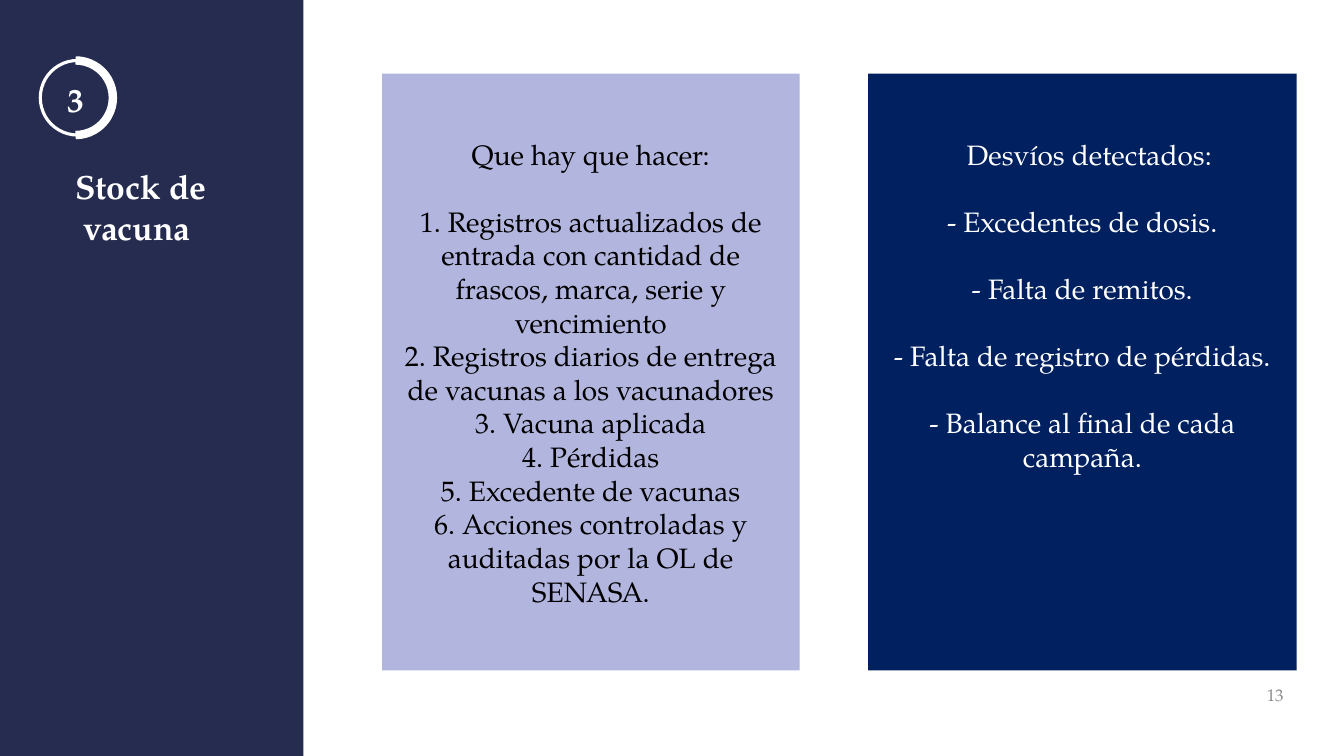
import lxml.etree
import pptx
import pptx.dml.color
import pptx.enum.shapes
import pptx.enum.text
import pptx.oxml.ns
import pptx.util

RGBColor = pptx.dml.color.RGBColor
SHAPE = pptx.enum.shapes.MSO_SHAPE
ALIGN = pptx.enum.text.PP_ALIGN
ANCHOR = pptx.enum.text.MSO_ANCHOR
qn = pptx.oxml.ns.qn

NAVY = RGBColor(0x25, 0x2C, 0x4F)
LAVENDER = RGBColor(0xB2, 0xB5, 0xDE)
BLUE = RGBColor(0x00, 0x20, 0x60)
WHITE = RGBColor(0xFF, 0xFF, 0xFF)
BLACK = RGBColor(0, 0, 0)
GREY = RGBColor(0x88, 0x88, 0x88)

FONT = "TeX Gyre Pagella"
WIDTH, HEIGHT = 13.33, 7.5
SIDEBAR_WIDTH = 3.01
PANEL_TOP, PANEL_HEIGHT = 0.73, 5.92
PAGE_NUMBER = 13

TASKS = [
    "Que hay que hacer:",
    "1. Registros actualizados de entrada con cantidad de frascos, marca, serie y vencimiento",
    "2. Registros diarios de entrega de vacunas a los vacunadores",
    "3. Vacuna aplicada",
    "4. Pérdidas",
    "5. Excedente de vacunas",
    "6. Acciones controladas y auditadas por la OL de SENASA.",
]
DEVIATIONS = [
    "Desvíos detectados:",
    "- Excedentes de dosis.",
    "- Falta de remitos.",
    "- Falta de registro de pérdidas.",
    "- Balance al final de cada campaña.",
]


def inches(*lengths):
    return [pptx.util.Inches(length) for length in lengths]


def apply(target, formats):
    for name, value in formats.items():
        setattr(target, name, value)


def style_font(font, size, color, bold=False):
    apply(font, {"name": FONT, "size": pptx.util.Pt(size), "bold": bold})
    font.color.rgb = color


def set_frame(frame, anchor, horizontal=0.1, vertical=0.1):
    side, edge = inches(horizontal, vertical)
    apply(frame, {
        "word_wrap": True, "auto_size": pptx.enum.text.MSO_AUTO_SIZE.NONE,
        "vertical_anchor": anchor, "margin_left": side, "margin_right": side,
        "margin_top": edge, "margin_bottom": edge,
    })


def add_block(slide, box, color):
    block = slide.shapes.add_shape(SHAPE.RECTANGLE, *inches(*box))
    block.shadow.inherit = False
    block.fill.solid()
    block.fill.fore_color.rgb = color
    block.line.fill.background()
    return block


def add_ring(slide, kind, box, weight):
    ring = slide.shapes.add_shape(kind, *inches(*box))
    ring.shadow.inherit = False
    ring.fill.background()
    ring.line.color.rgb = WHITE
    ring.line.width = pptx.util.Pt(weight)
    return ring


def add_badge(slide, left, top, diameter):
    add_ring(slide, SHAPE.OVAL, (left, top, diameter, diameter), 2.25)
    half_ring = add_ring(slide, SHAPE.ARC, (left - 0.02, top, diameter, diameter), 6)
    half_ring.adjustments[0] = 162
    half_ring.adjustments[1] = 54
    number = slide.shapes.add_textbox(*inches(left + 0.17, top + 0.13, diameter, 0.52))
    set_frame(number.text_frame, ANCHOR.TOP, vertical=0.05)
    number.text_frame.text = "3"
    style_font(number.text_frame.paragraphs[0].font, 24, WHITE, True)


def add_sidebar(slide, left, top, width, height):
    add_block(slide, (left, top, width, height), NAVY)
    title = slide.shapes.title
    title.element.getparent().append(title.element)
    apply(title, dict(zip(("left", "top", "width", "height"),
                          inches(left + 0.35, top + 1.55, 2.1, 1.05))))
    set_frame(title.text_frame, ANCHOR.TOP)
    title.text_frame.text = "Stock de vacuna "
    heading = title.text_frame.paragraphs[0]
    heading.alignment = ALIGN.CENTER
    style_font(heading.font, 24, WHITE, True)
    add_badge(slide, left + 0.4, top + 0.6, 0.74)


def add_panel(slide, box, fill, color, lines, spaced, heading_indent=0):
    panel = add_block(slide, box, fill)
    frame = panel.text_frame
    set_frame(frame, ANCHOR.TOP)
    frame.margin_top = pptx.util.Inches(0.63)
    frame.text = "\n".join(lines)
    for index, paragraph in enumerate(frame.paragraphs):
        paragraph.alignment = ALIGN.CENTER
        gap = 24 if index and (spaced or index == 1) else 0
        paragraph.space_before = pptx.util.Pt(gap)
        style_font(paragraph.font, 20, color)
    indent = pptx.util.Inches(heading_indent)
    frame.paragraphs[0]._p.get_or_add_pPr().set("marL", str(indent))


def add_page_number(slide, box):
    page = slide.shapes.add_textbox(*inches(*box))
    set_frame(page.text_frame, ANCHOR.MIDDLE, vertical=0.05)
    paragraph = page.text_frame.paragraphs[0]
    paragraph.alignment = ALIGN.RIGHT
    run = paragraph.add_run()
    run.text = str(PAGE_NUMBER)
    style_font(run.font, 12, GREY)
    field = lxml.etree.SubElement(
        paragraph._p, qn("a:fld"),
        id="{B6F15528-21DE-4FAA-801E-634DDDAF4B2B}", type="slidenum")
    field.extend(list(run._r))
    paragraph._p.remove(run._r)


def main():
    deck = pptx.Presentation()
    deck.slide_width, deck.slide_height = inches(WIDTH, HEIGHT)
    deck.element.set("firstSlideNum", str(PAGE_NUMBER))
    slide = deck.slides.add_slide(deck.slide_layouts[5])
    add_sidebar(slide, 0, 0, SIDEBAR_WIDTH, HEIGHT)
    add_panel(slide, (3.79, PANEL_TOP, 4.14, PANEL_HEIGHT),
              LAVENDER, BLACK, TASKS, False)
    add_panel(slide, (8.61, PANEL_TOP, 4.25, PANEL_HEIGHT),
              BLUE, WHITE, DEVIATIONS, True, 0.14)
    add_page_number(slide, (9.83, 6.69, 3, 0.4))
    deck.save("out.pptx")


if __name__ == "__main__":
    main()
